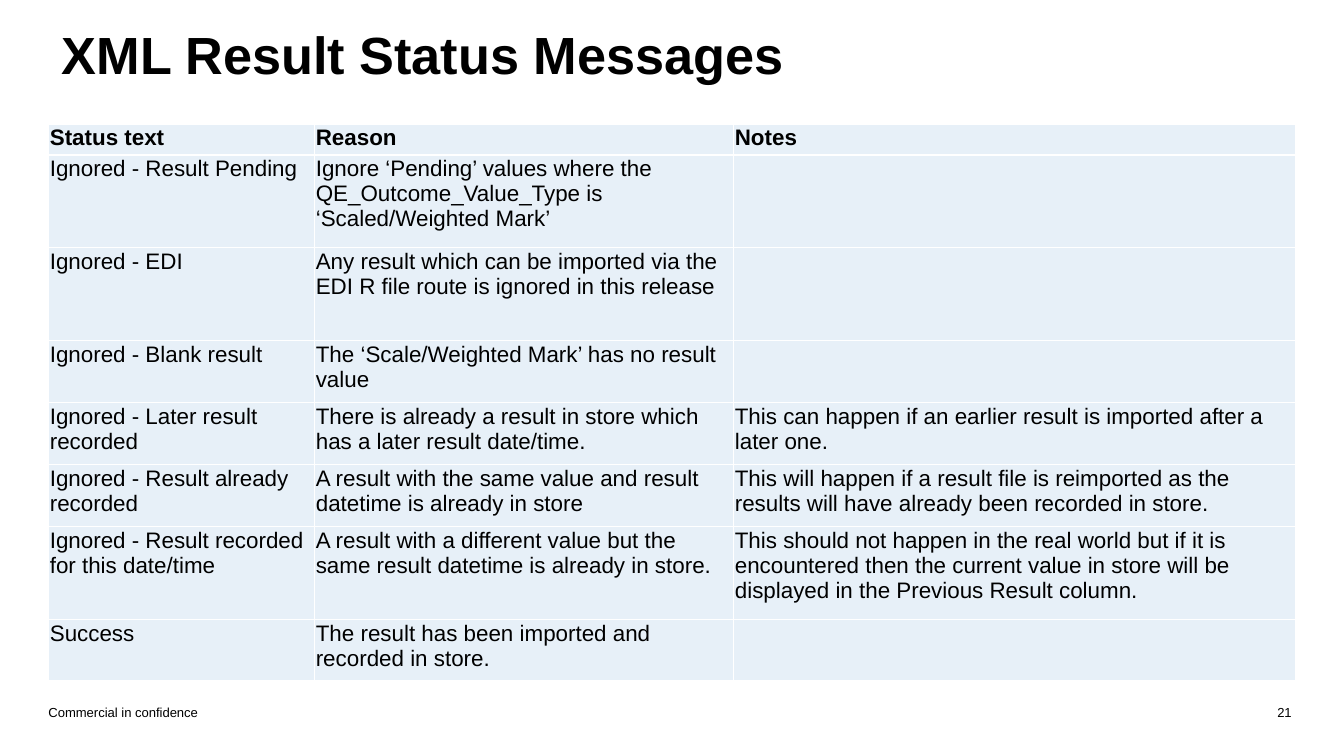
import dataclasses

import lxml.etree
import pptx
import pptx.dml.color
import pptx.enum.text
import pptx.oxml.ns
import pptx.util

Pt = pptx.util.Pt
Align = pptx.enum.text.PP_ALIGN
Anchor = pptx.enum.text.MSO_ANCHOR


@dataclasses.dataclass(frozen=True)
class Theme:
    font: str = "Arial"
    text: str = "000000"
    cell: str = "E7F0F8"
    border: str = "FFFFFF"
    title_size: float = 28
    table_size: float = 12
    footer_size: float = 7


THEME = Theme()
TITLE = "XML Result Status Messages"
COLUMN_WIDTHS = (142.5, 224.5, 301)
LINE_HEIGHT = 16.6

# Each row: its height in lines, then the cells
ROWS = (
    (1, "Status text", "Reason", "Notes"),
    (3, "Ignored - Result Pending",
     "Ignore ‘Pending’ values where the QE_Outcome_Value_Type is ‘Scaled/Weighted Mark’", ""),
    (3, "Ignored - EDI",
     "Any result which can be imported via the EDI R file route is ignored in this release", ""),
    (2, "Ignored - Blank result", "The ‘Scale/Weighted Mark’ has no result value", ""),
    (2, "Ignored - Later result recorded",
     "There is already a result in store which has a later result date/time.",
     "This can happen if an earlier result is imported after a later one."),
    (2, "Ignored - Result already recorded",
     "A result with the same value and result datetime is already in store",
     "This will happen if a result file is reimported as the results will have already "
     "been recorded in store."),
    (3, "Ignored - Result recorded for this date/time",
     "A result with a different value but the same result datetime is already in store.",
     "This should not happen in the real world but if it is encountered then the current "
     "value in store will be displayed in the Previous Result column."),
    (2, "Success", "The result has been imported and recorded in store.", ""),
)


def set_attributes(target, values):
    for name, value in values.items():
        setattr(target, name, value)


def format_text(paragraph, size, bold=False, align=Align.LEFT):
    paragraph.alignment = align
    set_attributes(paragraph.font, {"name": THEME.font, "size": Pt(size), "bold": bold})
    paragraph.font.color.rgb = pptx.dml.color.RGBColor.from_string(THEME.text)


def add_title(slide, left, top, width, height):
    title = slide.shapes.title
    set_attributes(title, {"left": Pt(left), "top": Pt(top),
                           "width": Pt(width), "height": Pt(height)})
    set_attributes(title.text_frame, {
        "text": TITLE, "vertical_anchor": Anchor.BOTTOM,
        "auto_size": pptx.enum.text.MSO_AUTO_SIZE.NONE})
    paragraph = title.text_frame.paragraphs[0]
    paragraph.line_spacing = 0.9
    format_text(paragraph, THEME.title_size, bold=True)


def add_cell_borders(cell):
    """Draw a thin line on all four sides; call before the cell is filled."""
    properties = cell._tc.get_or_add_tcPr()
    qn = pptx.oxml.ns.qn
    for side in ("a:lnL", "a:lnR", "a:lnT", "a:lnB"):
        line = lxml.etree.SubElement(properties, qn(side), w=str(Pt(1)))
        fill = lxml.etree.SubElement(line, qn("a:solidFill"))
        lxml.etree.SubElement(fill, qn("a:srgbClr"), val=THEME.border)


def fill_cell(cell, text, bold):
    set_attributes(cell, {"text": text, "margin_left": Pt(0.72), "margin_right": Pt(0.72),
                          "margin_top": Pt(0.72), "margin_bottom": 0,
                          "vertical_anchor": Anchor.TOP})
    add_cell_borders(cell)
    cell.fill.solid()
    cell.fill.fore_color.rgb = pptx.dml.color.RGBColor.from_string(THEME.cell)
    format_text(cell.text_frame.paragraphs[0], THEME.table_size, bold)


def add_status_table(slide, left, top):
    height = LINE_HEIGHT * sum(row[0] for row in ROWS)
    table = slide.shapes.add_table(
        len(ROWS), len(COLUMN_WIDTHS), Pt(left), Pt(top),
        Pt(sum(COLUMN_WIDTHS)), Pt(height)).table
    table.horz_banding = False
    for column, width in zip(table.columns, COLUMN_WIDTHS):
        column.width = Pt(width)
    for index, (lines, *texts) in enumerate(ROWS):
        table.rows[index].height = Pt(lines * LINE_HEIGHT)
        for cell, text in zip(table.rows[index].cells, texts):
            fill_cell(cell, text, bold=index == 0)


def add_footer_text(slide, text, left, top, width, height, align):
    frame = slide.shapes.add_textbox(Pt(left), Pt(top), Pt(width), Pt(height)).text_frame
    set_attributes(frame, {"text": text, "word_wrap": True, "vertical_anchor": Anchor.MIDDLE,
                           "margin_left": 0, "margin_right": 0,
                           "margin_top": 0, "margin_bottom": 0})
    format_text(frame.paragraphs[0], THEME.footer_size, align=align)


def add_footer(slide, left, top, width, height):
    number_width = 28
    add_footer_text(slide, "Commercial in confidence", left, top, 324, height, Align.LEFT)
    add_footer_text(slide, "21", left + width - number_width, top, number_width, height,
                    Align.RIGHT)


def main():
    presentation = pptx.Presentation()
    set_attributes(presentation, {"slide_width": Pt(720), "slide_height": Pt(405)})
    slide = presentation.slides.add_slide(presentation.slide_layouts.get_by_name("Title Only"))
    add_title(slide, 26, 6.5, 666, 43)
    add_status_table(slide, 26, 66.3)
    add_footer(slide, 26, 377.5, 666, 8.5)
    presentation.save("out.pptx")


if __name__ == "__main__":
    main()
